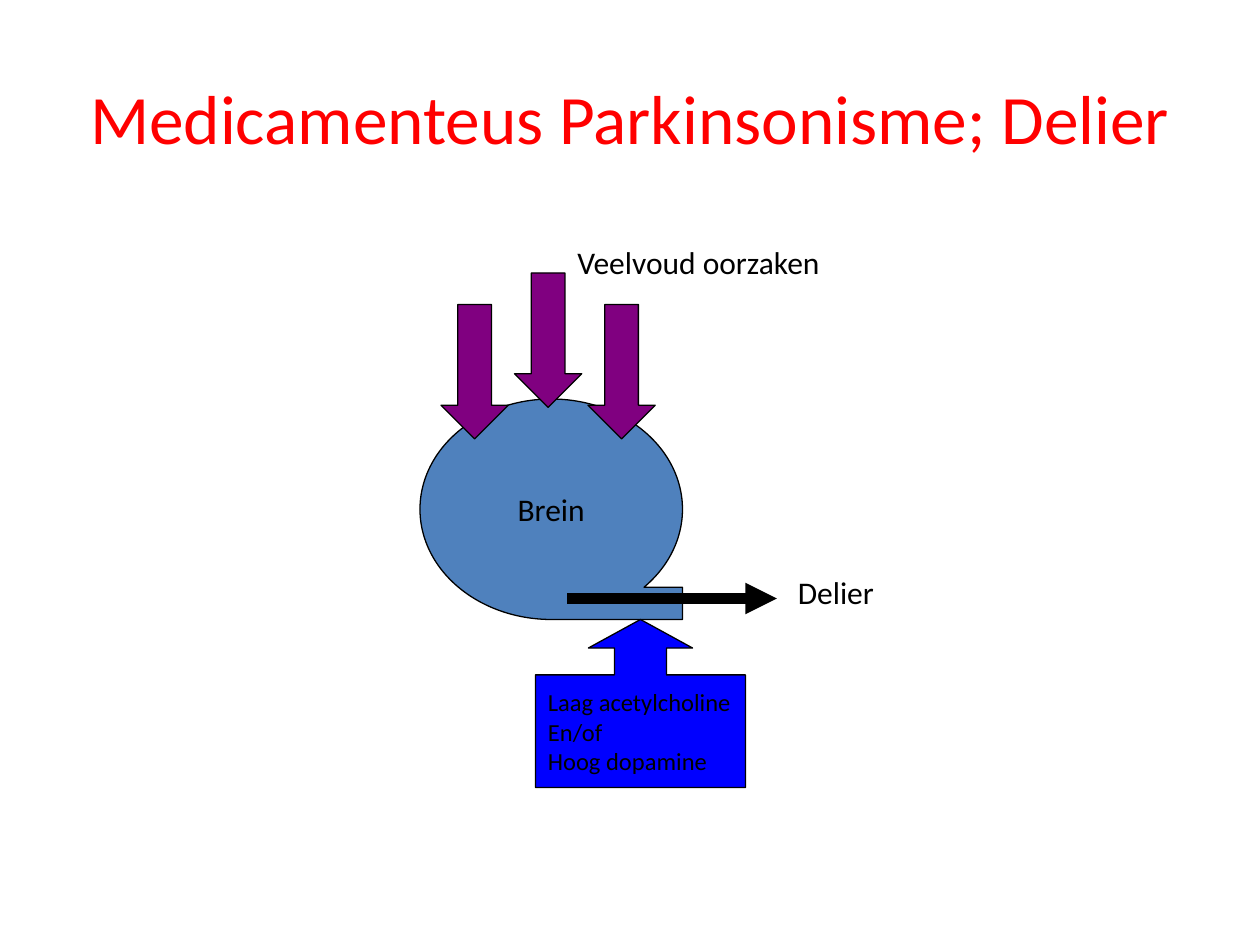
from lxml.etree import SubElement
from pptx import Presentation
from pptx.dml.color import RGBColor
from pptx.enum.shapes import MSO_CONNECTOR, MSO_SHAPE
from pptx.enum.text import MSO_ANCHOR, PP_ALIGN
from pptx.oxml.ns import qn
from pptx.util import Inches, Pt

# Content
COLORS = {"title": "FF0000", "ink": "000000", "brain": "4F81BD",
          "chemistry": "0000FF", "cause": "800080"}
FONT = "Calibri"
TITLE = "Medicamenteus Parkinsonisme; Delier"
BRAIN = "Brein"
OUTCOME = "Delier"
CAUSES = "Veelvoud oorzaken"
CHEMISTRY = ["Laag acetylcholine", "En/of", "Hoog dopamine"]

# Grid of 120 columns by 90 rows; boxes are left, top, width, height in cells
CELL = Inches(10) / 120
TITLE_BOX = (6, 3.6, 108, 15)
BRAIN_BOX = (40, 38, 25, 21)
CHEMISTRY_BOX = (51, 59, 20, 16)
OUTCOME_BOX = (74.8, 54, 12.4, 6)
CAUSES_BOX = (53.8, 22.6, 34.6, 10.8)
OUTCOME_ARROW = (54, 57, 74, 57)
CAUSE_LEFT, CAUSE_STEP, CAUSE_SIZE = 42, 7, (6.4, 12.8)
CAUSE_TOPS = [29, 26, 29]


def cells(values):
    return [round(value * CELL) for value in values]


def color(name):
    return RGBColor.from_string(COLORS[name])


def write(holder, lines, size, tint="ink", align=PP_ALIGN.LEFT,
          anchor=MSO_ANCHOR.TOP, wrap=False):
    frame = holder.text_frame
    frame.word_wrap = wrap
    frame.vertical_anchor = anchor
    for index, line in enumerate(lines):
        paragraph = frame.add_paragraph() if index else frame.paragraphs[0]
        paragraph.alignment = align
        run = paragraph.add_run()
        run.text = line
        run.font.name = FONT
        run.font.size = Pt(size)
        run.font.color.rgb = color(tint)


def add_figure(slide, preset, box, fill, adjustments=()):
    figure = slide.shapes.add_shape(preset, *cells(box))
    figure.shadow.inherit = False
    figure.fill.solid()
    figure.fill.fore_color.rgb = color(fill)
    figure.line.color.rgb = color("ink")
    figure.line.width = Pt(0.75)
    for index, value in enumerate(adjustments):
        figure.adjustments[index] = value
    return figure


def add_label(slide, box, text, size, **style):
    write(slide.shapes.add_textbox(*cells(box)), [text], size, **style)


def add_arrow(slide, ends):
    arrow = slide.shapes.add_connector(MSO_CONNECTOR.STRAIGHT, *cells(ends))
    arrow.line.color.rgb = color("ink")
    arrow.line.width = Pt(6)
    SubElement(arrow.line._get_or_add_ln(), qn("a:tailEnd"), type="triangle")
    SubElement(arrow._element.spPr, qn("a:effectLst"))


def main():
    deck = Presentation()
    deck.slide_width, deck.slide_height = Inches(10), Inches(7.5)
    slide = deck.slides.add_slide(deck.slide_layouts[6])

    # Title
    add_label(slide, TITLE_BOX, TITLE, 39.6, tint="title",
              align=PP_ALIGN.CENTER, anchor=MSO_ANCHOR.MIDDLE, wrap=True)

    # Brain and its outcome
    brain = add_figure(slide, MSO_SHAPE.FLOWCHART_SEQUENTIAL_ACCESS_STORAGE,
                       BRAIN_BOX, "brain")
    write(brain, [BRAIN], 18, align=PP_ALIGN.CENTER, anchor=MSO_ANCHOR.MIDDLE)
    add_arrow(slide, OUTCOME_ARROW)
    add_label(slide, OUTCOME_BOX, OUTCOME, 18, wrap=True)

    # Chemical imbalance
    chemistry = add_figure(slide, MSO_SHAPE.UP_ARROW_CALLOUT, CHEMISTRY_BOX,
                           "chemistry", (0.31, 0.31, 0.17, 0.67))
    write(chemistry, CHEMISTRY, 14, anchor=MSO_ANCHOR.MIDDLE)

    # Causes
    for index, top in enumerate(CAUSE_TOPS):
        left = CAUSE_LEFT + index * CAUSE_STEP
        add_figure(slide, MSO_SHAPE.DOWN_ARROW, (left, top, *CAUSE_SIZE),
                   "cause", (0.5, 0.5))
    add_label(slide, CAUSES_BOX, CAUSES, 18)

    deck.save("out.pptx")


if __name__ == "__main__":
    main()
